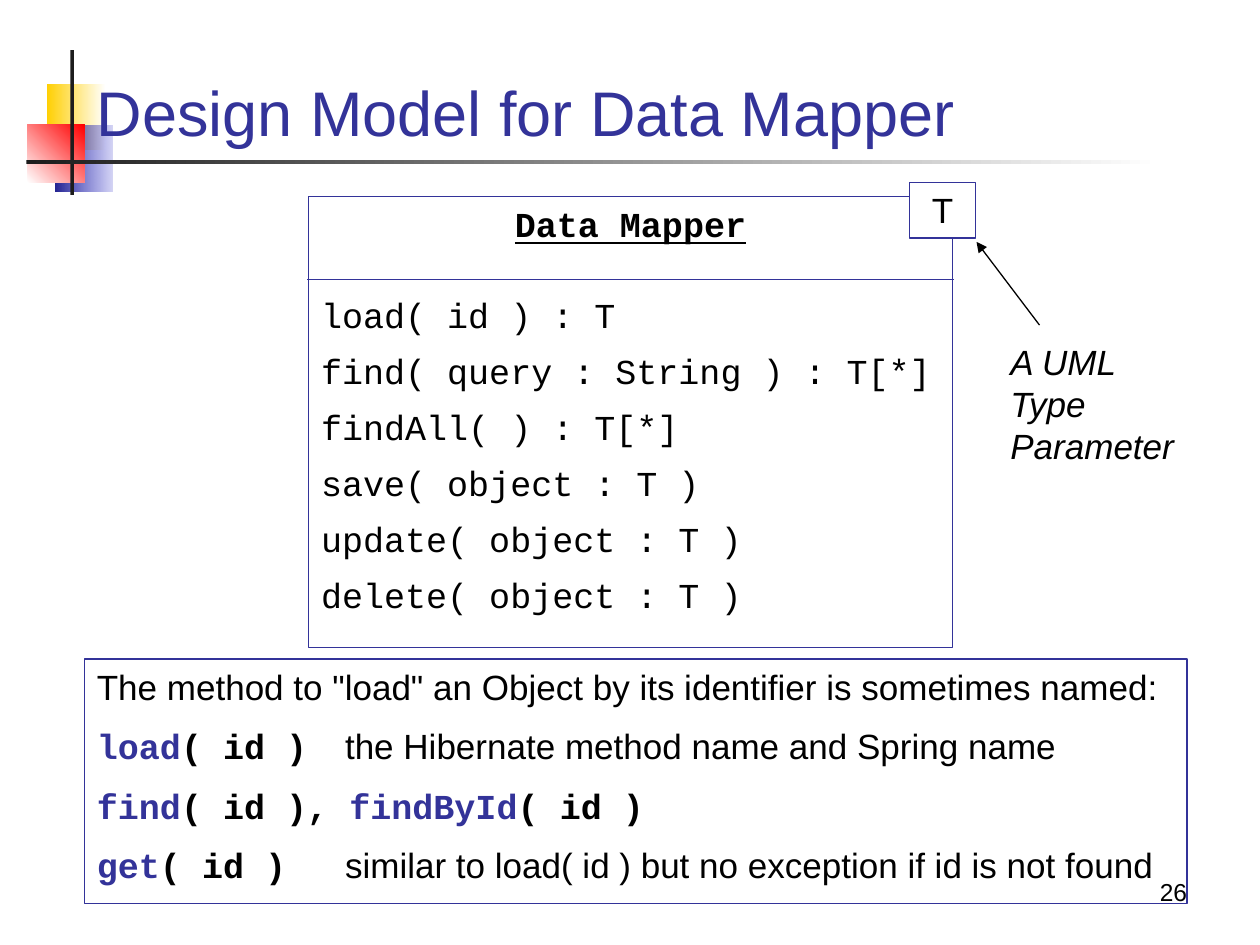
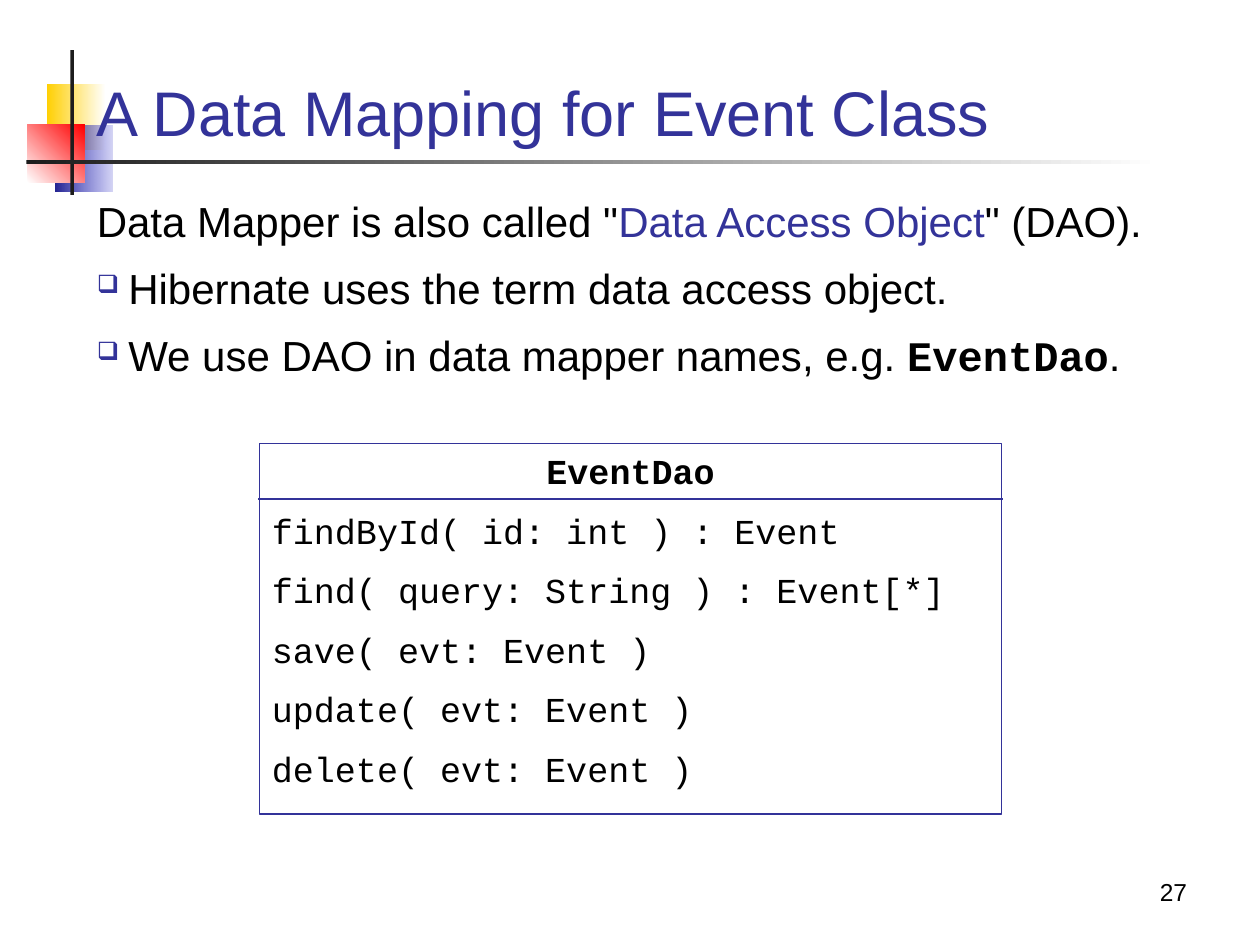
"""Build two slides on the Data Mapper pattern."""
from dataclasses import dataclass

import lxml.etree
import pptx
import pptx.dml.color
import pptx.enum.shapes
import pptx.enum.text
import pptx.oxml.ns
import pptx.util

Inches = pptx.util.Inches
Points = pptx.util.Pt
Align = pptx.enum.text.PP_ALIGN
Anchor = pptx.enum.text.MSO_ANCHOR
Slide = pptx.slide.Slide
qualified = pptx.oxml.ns.qn

BLACK = "000000"
WHITE = "FFFFFF"
INDIGO = "333399"
CHARCOAL = "1C1C1C"
SANS = "Arial"
MONO = "Courier New"
LINE_WIDTH = 0.75
WIDE_GAP = 0.5
NARROW_GAP = 0.4


@dataclass(frozen=True)
class Box:
    left: float
    top: float
    width: float
    height: float


@dataclass(frozen=True)
class Span:
    text: str
    face: str = SANS
    color: str = BLACK
    bold: bool = False
    italic: bool = False
    underline: bool = False


@dataclass(frozen=True)
class Line:
    """A paragraph whose gaps are shares of its text size."""
    spans: tuple[Span, ...]
    size: float = 20
    align: Align = Align.LEFT
    gap_before: float = 0
    gap_after: float = 0
    hanging: float = 0
    bullet: str = ""
    tab: float = 0


@dataclass(frozen=True)
class Ornament:
    box: Box
    start: str
    end: str
    angle: float = 0
    end_opacity: int = 100


@dataclass(frozen=True)
class ClassDiagram:
    box: Box
    divider: float
    name: Span
    methods: tuple[str, ...]
    gap: float
    name_gap: float = 0


ORNAMENTS = (
    Ornament(Box(0.37, 0.67, 0.47, 0.52), "FFCF01", WHITE),
    Ornament(Box(0.44, 1, 0.45, 0.52), "242492", "3333CC", end_opacity=20),
    Ornament(Box(0.22, 0.99, 0.45, 0.46), WHITE, "FF0000", angle=45),
    Ornament(Box(0.56, 0.4, 0.03, 1.15), CHARCOAL, CHARCOAL),
    Ornament(Box(0.21, 1.27, 9, 0.03), CHARCOAL, WHITE),
)

DATA_MAPPER = ClassDiagram(
    Box(2.45, 1.56, 5.11, 3.58),
    2.22,
    Span("Data Mapper", MONO, bold=True, underline=True),
    (
        "load( id ) : T",
        "find( query : String ) : T[*]",
        "findAll( ) : T[*]",
        "save( object : T )",
        "update( object : T )",
        "delete( object : T )",
    ),
    NARROW_GAP,
    name_gap=1,
)

EVENT_DAO = ClassDiagram(
    Box(2.06, 3.52, 5.89, 2.94),
    3.96,
    Span("EventDao", MONO, bold=True),
    (
        "findById( id: int ) : Event",
        "find( query: String ) : Event[*]",
        "save( evt: Event )",
        "update( evt: Event )",
        "delete( evt: Event )",
    ),
    WIDE_GAP,
)


def rgb(color: str) -> pptx.dml.color.RGBColor:
    """Turn a hex string into a colour."""
    return pptx.dml.color.RGBColor.from_string(color)


def inches(*lengths: float) -> list[pptx.util.Length]:
    """Convert numbers to slide lengths."""
    return [Inches(length) for length in lengths]


def add_child(parent, tag: str, **attributes: str):
    """Append a DrawingML element."""
    return lxml.etree.SubElement(parent, qualified(f"a:{tag}"), attributes)


def add_rectangle(slide: Slide, box: Box):
    """Add a rectangle with no shadow and no line."""
    shape = slide.shapes.add_shape(
        pptx.enum.shapes.MSO_SHAPE.RECTANGLE,
        *inches(box.left, box.top, box.width, box.height),
    )
    shape.shadow.inherit = False
    shape.line.fill.background()
    return shape


def add_ornament(slide: Slide, ornament: Ornament) -> None:
    """Add one gradient block of the title decoration."""
    shape = add_rectangle(slide, ornament.box)
    shape.fill.gradient()
    shape.fill.gradient_angle = ornament.angle
    for stop, color in zip(shape.fill.gradient_stops, (ornament.start, ornament.end)):
        stop.color.rgb = rgb(color)
    if ornament.end_opacity < 100:
        end_color = list(shape.element.iter(qualified("a:srgbClr")))[-1]
        add_child(end_color, "alpha", val=str(ornament.end_opacity * 1000))


def style_font(font, span: Span, size: float) -> None:
    """Apply a span's style to a font."""
    font.name = span.face
    font.size = Points(size)
    font.color.rgb = rgb(span.color)
    font.bold = span.bold
    font.italic = span.italic
    font.underline = span.underline


def format_paragraph(paragraph, line: Line) -> None:
    """Set the alignment, spacing, bullet and tab of a paragraph."""
    properties = paragraph._p.get_or_add_pPr()
    if line.hanging:
        properties.set("marL", str(Inches(line.hanging)))
        properties.set("indent", str(-Inches(line.hanging)))
    if line.bullet:
        add_child(add_child(properties, "buClr"), "srgbClr", val=INDIGO)
        add_child(properties, "buSzPct", val="60000")
        add_child(properties, "buChar", char=line.bullet)
    if line.tab:
        tabs = add_child(properties, "tabLst")
        add_child(tabs, "tab", pos=str(Inches(line.tab)), algn="l")
    paragraph.alignment = line.align
    paragraph.space_before = Points(line.gap_before * line.size)
    paragraph.space_after = Points(line.gap_after * line.size)


def write(shape, lines: list[Line], anchor: Anchor = Anchor.TOP) -> None:
    """Fill a shape with formatted lines."""
    frame = shape.text_frame
    frame.word_wrap = True
    frame.vertical_anchor = anchor
    for index, line in enumerate(lines):
        paragraph = frame.add_paragraph() if index else frame.paragraphs[0]
        format_paragraph(paragraph, line)
        style_font(paragraph.font, line.spans[0], line.size)
        for span in line.spans:
            run = paragraph.add_run()
            run.text = span.text
            style_font(run.font, span, line.size)


def add_text(slide: Slide, box: Box, lines: list[Line], anchor: Anchor = Anchor.TOP) -> None:
    """Add a text box."""
    shape = slide.shapes.add_textbox(*inches(box.left, box.top, box.width, box.height))
    write(shape, lines, anchor)


def add_panel(slide: Slide, box: Box, lines: list[Line], fill: str = "") -> None:
    """Add an outlined rectangle with text."""
    shape = add_rectangle(slide, box)
    if fill:
        shape.fill.solid()
        shape.fill.fore_color.rgb = rgb(fill)
    else:
        shape.fill.background()
    shape.line.color.rgb = rgb(INDIGO)
    shape.line.width = Points(LINE_WIDTH)
    write(shape, lines)


def add_line(slide: Slide, start: tuple[float, float], end: tuple[float, float],
             color: str, arrow: bool = False) -> None:
    """Draw a straight line, with an arrowhead at its end if asked."""
    connector = slide.shapes.add_connector(
        pptx.enum.shapes.MSO_CONNECTOR.STRAIGHT, *inches(*start, *end))
    connector.line.color.rgb = rgb(color)
    connector.line.width = Points(LINE_WIDTH)
    properties = connector.element.spPr
    if arrow:
        add_child(properties.find(qualified("a:ln")), "tailEnd", type="triangle")
    add_child(properties, "effectLst")


def add_class_diagram(slide: Slide, diagram: ClassDiagram) -> None:
    """Draw a class box with its name, divider and methods."""
    box = diagram.box
    name = Line((diagram.name,), align=Align.CENTER, gap_after=diagram.name_gap)
    methods = [Line((Span(method, MONO),), gap_before=diagram.gap) for method in diagram.methods]
    add_panel(slide, box, [name, *methods])
    add_line(slide, (box.left + box.width + 0.01, diagram.divider),
             (box.left - 0.01, diagram.divider), INDIGO)


def add_base_slide(presentation, title: str, number: int) -> Slide:
    """Add a slide with the shared decoration, title and number."""
    slide = presentation.slides.add_slide(presentation.slide_layouts[6])
    for ornament in ORNAMENTS:
        add_ornament(slide, ornament)
    add_text(slide, Box(0.67, 0.28, 8.66, 0.95),
             [Line((Span(title, color=INDIGO),), size=36)], Anchor.BOTTOM)
    add_text(slide, Box(7.44, 6.74, 2.08, 0.5),
             [Line((Span(str(number)),), size=14, align=Align.RIGHT)], Anchor.BOTTOM)
    return slide


def call(name: str, suffix: str = "( id )") -> tuple[Span, Span]:
    """Return a highlighted method name and its arguments."""
    return Span(name, MONO, INDIGO, bold=True), Span(suffix, MONO, bold=True)


def build_design_model(presentation) -> None:
    """Build the slide on the generic mapper."""
    slide = add_base_slide(presentation, "Design Model for Data Mapper", 26)
    add_class_diagram(slide, DATA_MAPPER)
    add_panel(slide, Box(7.22, 1.45, 0.52, 0.44),
              [Line((Span("T"),), align=Align.CENTER)], WHITE)
    add_line(slide, (8.25, 2.58), (7.75, 1.92), BLACK, arrow=True)
    add_text(slide, Box(7.92, 2.65, 1.58, 1.1),
             [Line((Span("A UML Type Parameter", italic=True),))])
    naming = (
        (*call("load"), Span("\tthe Hibernate method name and Spring name")),
        (*call("find", "( id ), "), *call("findById")),
        (*call("get"), Span("\tsimilar to load( id ) but no exception if id is not found")),
    )
    intro = Span('The method to "load" an Object by its identifier is sometimes named:')
    add_panel(slide, Box(0.67, 5.23, 8.75, 1.94), [
        Line((intro,)),
        *(Line(spans, gap_before=WIDE_GAP, tab=1.97) for spans in naming),
    ])


def build_event_mapping(presentation) -> None:
    """Build the slide on the event mapper."""
    slide = add_base_slide(presentation, "A Data Mapping for Event Class", 27)
    intro = (Span('Data Mapper is also called "'),
             Span("Data Access Object", color=INDIGO), Span('" (DAO).'))
    points = (
        (Span("Hibernate uses the term data access object."),),
        (Span("We use DAO in data mapper names, e.g. "),
         Span("EventDao", MONO, bold=True), Span(".")),
    )
    add_text(slide, Box(0.67, 1.5, 8.66, 1.9), [
        Line(intro, size=24, hanging=0.25),
        *(Line(spans, size=24, gap_before=NARROW_GAP, hanging=0.25, bullet="❑")
          for spans in points),
    ])
    add_class_diagram(slide, EVENT_DAO)


def main() -> None:
    """Build and save the presentation."""
    presentation = pptx.Presentation()
    presentation.slide_width, presentation.slide_height = inches(10, 7.5)
    build_design_model(presentation)
    build_event_mapping(presentation)
    presentation.save("out.pptx")


if __name__ == "__main__":
    main()
